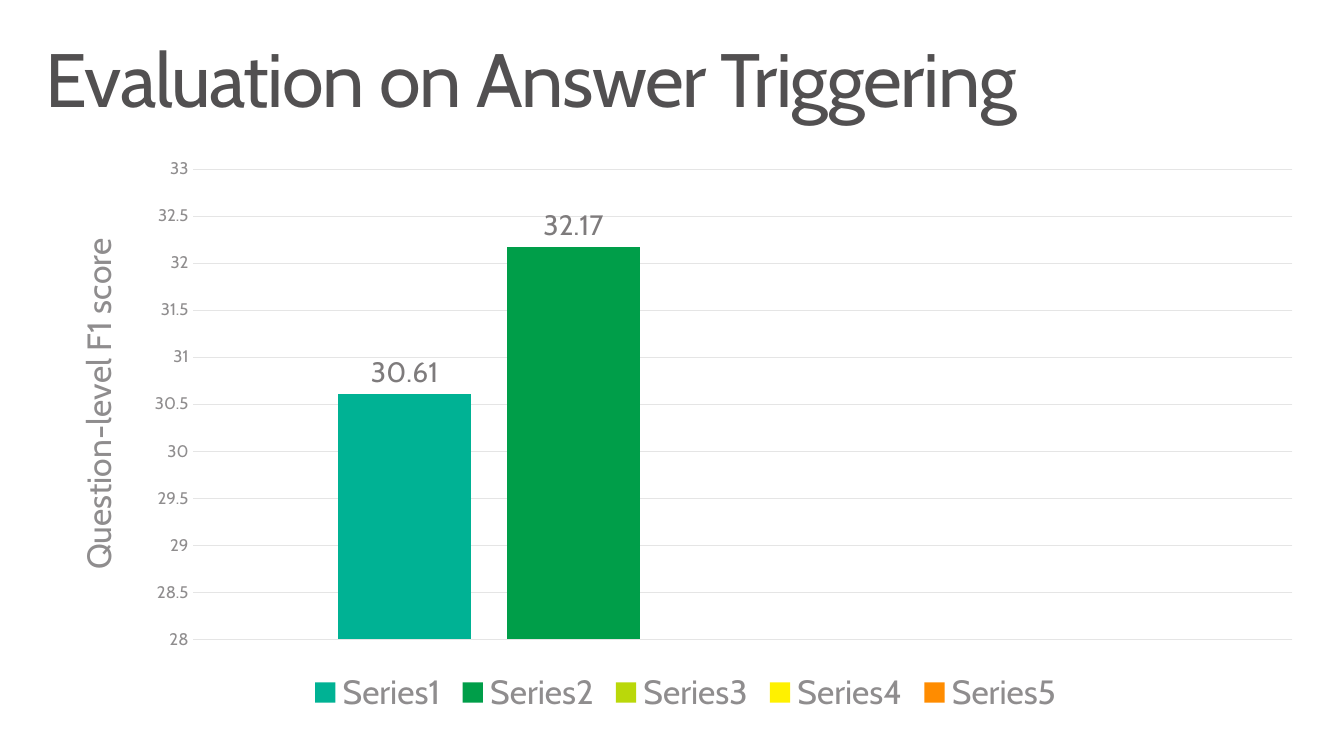
from lxml.etree import SubElement
from pptx import Presentation
from pptx.chart.data import CategoryChartData
from pptx.dml.color import RGBColor
from pptx.enum.chart import XL_CHART_TYPE, XL_LABEL_POSITION, XL_LEGEND_POSITION, XL_TICK_MARK
from pptx.enum.text import MSO_ANCHOR
from pptx.oxml import parse_xml
from pptx.oxml.ns import nsdecls, qn
from pptx.util import Inches, Pt

HUES = {"title": "525051", "axis": "8F8D8E", "label": "7E7B7C", "grid": "E5E5E5",
        "teal": "00B294", "green": "009E49", "lime": "BAD80A",
        "yellow": "FFF100", "orange": "FF8C00"}
BARS = [("teal", 30.61, 20), ("green", 32.17, 20), ("lime", None, 16),
        ("yellow", None, 16), ("orange", None, 16)]


class Deck:
    """Hold the font, the colours and the current slide."""

    def __init__(self, face, hues):
        self.face, self.hues = face, hues
        self.show = Presentation()
        self.show.slide_width, self.show.slide_height = Inches(13.33), Inches(7.5)
        self.slide = self.show.slides.add_slide(self.show.slide_layouts[6])

    def hue(self, name):
        return RGBColor.from_string(self.hues[name])

    def style(self, font, size, name):
        font.name, font.size, font.bold = self.face, Pt(size), False
        font.color.rgb = self.hue(name)

    def title(self, text, box):
        frame = self.slide.shapes.add_textbox(*map(Inches, box)).text_frame
        frame.word_wrap = True
        frame.vertical_anchor = MSO_ANCHOR.TOP
        frame.margin_left = frame.margin_right = Inches(0.16)
        frame.margin_top = frame.margin_bottom = Inches(0.1)
        para = frame.paragraphs[0]
        para.line_spacing = 0.9
        run = para.add_run()
        run.text = text
        self.style(run.font, 54, "title")
        run.font._element.set("spc", "-100")

    def chart(self, bars, box):
        data = CategoryChartData()
        data.categories = ["1"]
        for num, (_, value, _) in enumerate(bars, 1):
            data.add_series(f"Series{num}", [value])
        chart = self.slide.shapes.add_chart(
            XL_CHART_TYPE.COLUMN_CLUSTERED, *map(Inches, box), data).chart
        self.style(chart.font, 10, "title")
        chart.has_title = False
        chart.has_legend = True
        chart.legend.position = XL_LEGEND_POSITION.BOTTOM
        chart.legend.include_in_layout = False
        self.style(chart.legend.font, 24, "axis")
        plot = chart.plots[0]
        plot.gap_width, plot.overlap, plot.vary_by_categories = 219, -27, False
        for line, (name, _, size) in zip(plot.series, bars):
            line.format.fill.solid()
            line.format.fill.fore_color.rgb = self.hue(name)
            tags = line.data_labels
            tags.show_value = True
            tags.position = XL_LABEL_POSITION.OUTSIDE_END
            self.style(tags.font, size, "label")
        chart.category_axis.visible = False
        return chart

    def scale(self, axis, text, low, high, step):
        axis.minimum_scale, axis.maximum_scale, axis.major_unit = low, high, step
        axis.major_tick_mark = axis.minor_tick_mark = XL_TICK_MARK.NONE
        axis.format.line.fill.background()
        self.style(axis.tick_labels.font, 12, "axis")
        axis.tick_labels.number_format = "General"
        axis.tick_labels.number_format_is_linked = False
        grid = axis.major_gridlines.format.line
        grid.width = Pt(0.75)
        grid.color.rgb = self.hue("grid")
        run = axis.axis_title.text_frame.paragraphs[0].add_run()
        run.text = text
        self.style(run.font, 24, "axis")

    def place(self, chart, **part):
        area = chart._chartSpace.chart.plotArea
        for old in area.findall(qn("c:layout")):
            area.remove(old)
        layout = parse_xml(f"<c:layout {nsdecls('c')}><c:manualLayout/></c:layout>")
        area.insert(0, layout)
        modes = {"layoutTarget": "inner", "xMode": "edge", "yMode": "edge"}
        for tag, value in (modes | part).items():
            SubElement(layout[0], qn(f"c:{tag}")).set("val", str(value))


def main():
    deck = Deck("Cabin", HUES)
    chart = deck.chart(BARS, (0.53, 1.45, 12.54, 5.69))
    deck.scale(chart.value_axis, "Question-level F1 score", 28, 33, 0.5)
    deck.place(chart, x=0.11, y=0.04, w=0.87, h=0.82)
    deck.title("Evaluation on Answer Triggering", (0.29, 0.32, 12.75, 0.98))
    deck.show.save("out.pptx")


if __name__ == "__main__":
    main()
